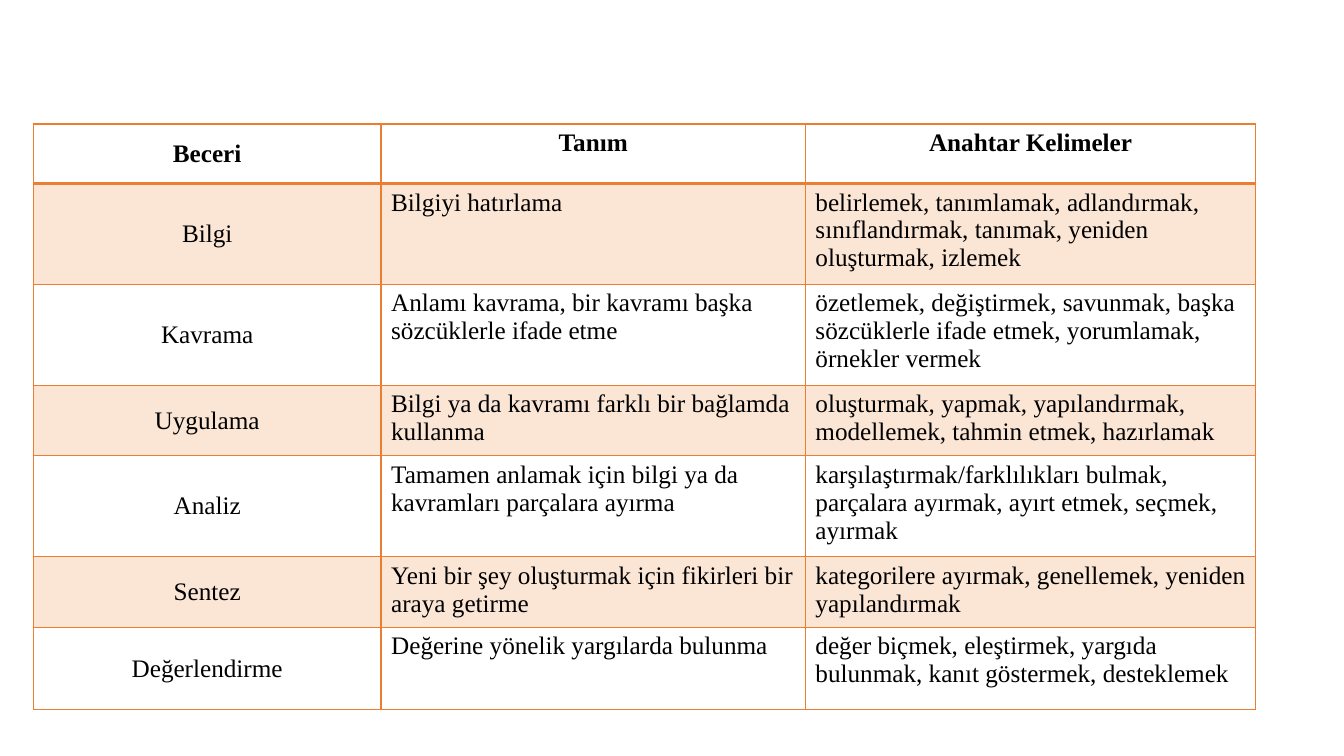
from lxml import etree
from pptx import Presentation
from pptx.dml.color import RGBColor
from pptx.enum.text import MSO_ANCHOR, PP_ALIGN
from pptx.oxml.ns import qn
from pptx.util import Pt

CENTER, LEFT = PP_ALIGN.CENTER, PP_ALIGN.LEFT
MIDDLE, TOP = MSO_ANCHOR.MIDDLE, MSO_ANCHOR.TOP
ORANGE = RGBColor(0xED, 0x7D, 0x31)
BLACK = RGBColor(0, 0, 0)
BLANK_LAYOUT = 6

COLUMN_WIDTHS = (248.4, 303.1, 321.8)
ROW_HEIGHTS = (42.5, 72, 72, 50.5, 72, 50.5, 59)
SKILLS = (
    ("Beceri", "Tanım", "Anahtar Kelimeler"),
    ("Bilgi", "Bilgiyi hatırlama",
     "belirlemek, tanımlamak, adlandırmak, sınıflandırmak, tanımak, yeniden oluşturmak, izlemek"),
    ("Kavrama", "Anlamı kavrama, bir kavramı başka\nsözcüklerle ifade etme",
     "özetlemek, değiştirmek, savunmak, başka sözcüklerle ifade etmek, yorumlamak, örnekler vermek"),
    ("Uygulama", "Bilgi ya da kavramı farklı bir bağlamda kullanma",
     "oluşturmak, yapmak, yapılandırmak,\nmodellemek, tahmin etmek, hazırlamak"),
    ("Analiz", "Tamamen anlamak için bilgi ya da\nkavramları parçalara ayırma",
     "karşılaştırmak/farklılıkları bulmak,\nparçalara ayırmak, ayırt etmek, seçmek, ayırmak"),
    ("Sentez", "Yeni bir şey oluşturmak için fikirleri bir araya getirme",
     "kategorilere ayırmak, genellemek, yeniden yapılandırmak"),
    ("Değerlendirme", "Değerine yönelik yargılarda bulunma",
     "değer biçmek, eleştirmek, yargıda\nbulunmak, kanıt göstermek, desteklemek"),
)


class SlideBuilder:
    font_name = "Times New Roman"
    font_size = Pt(18)
    band_opacity = 20

    def __init__(self, page):
        self.page = page

    def table(self, left, top, widths, heights, rows):
        frame = self.page.shapes.add_table(
            len(rows), len(widths), Pt(left), Pt(top), Pt(sum(widths)), Pt(sum(heights)))
        table = frame.table
        table.first_row = table.horz_banding = False
        for column, width in zip(table.columns, widths):
            column.width = Pt(width)
        for row, height in zip(table.rows, heights):
            row.height = Pt(height)
        for row_index, texts in enumerate(rows):
            for column_index, text in enumerate(texts):
                cell = table.cell(row_index, column_index)
                self.text(cell, text, row_index == 0, column_index == 0)
                self.borders(cell, row_index)
                self.band(cell, row_index % 2 == 1)

    def text(self, cell, text, is_header, is_skill):
        cell.text = text
        cell.vertical_anchor = MIDDLE if is_skill else TOP
        for paragraph in cell.text_frame.paragraphs:
            paragraph.alignment = CENTER if is_header or is_skill else LEFT
            paragraph.font.name = self.font_name
            paragraph.font.size = self.font_size
            paragraph.font.bold = is_header
            paragraph.font.color.rgb = BLACK

    def borders(self, cell, row_index):
        widths = {"L": 1, "R": 1, "T": 2 if row_index == 1 else 1, "B": 2 if row_index == 0 else 1}
        properties = cell._tc.get_or_add_tcPr()
        for side, width in widths.items():
            line = etree.SubElement(properties, qn(f"a:ln{side}"), w=str(Pt(width)))
            fill = etree.SubElement(line, qn("a:solidFill"))
            etree.SubElement(fill, qn("a:srgbClr"), val=str(ORANGE))

    def band(self, cell, is_tinted):
        if not is_tinted:
            cell.fill.background()
            return
        cell.fill.solid()
        cell.fill.fore_color.rgb = ORANGE
        color = cell._tc.tcPr.find(f"{qn('a:solidFill')}/{qn('a:srgbClr')}")
        etree.SubElement(color, qn("a:alpha"), val=str(self.band_opacity * 1000))


def main():
    deck = Presentation()
    deck.slide_width, deck.slide_height = Pt(960), Pt(540)
    page = deck.slides.add_slide(deck.slide_layouts[BLANK_LAYOUT])
    SlideBuilder(page).table(23.8, 88.6, COLUMN_WIDTHS, ROW_HEIGHTS, SKILLS)
    deck.save("out.pptx")


if __name__ == "__main__":
    main()
